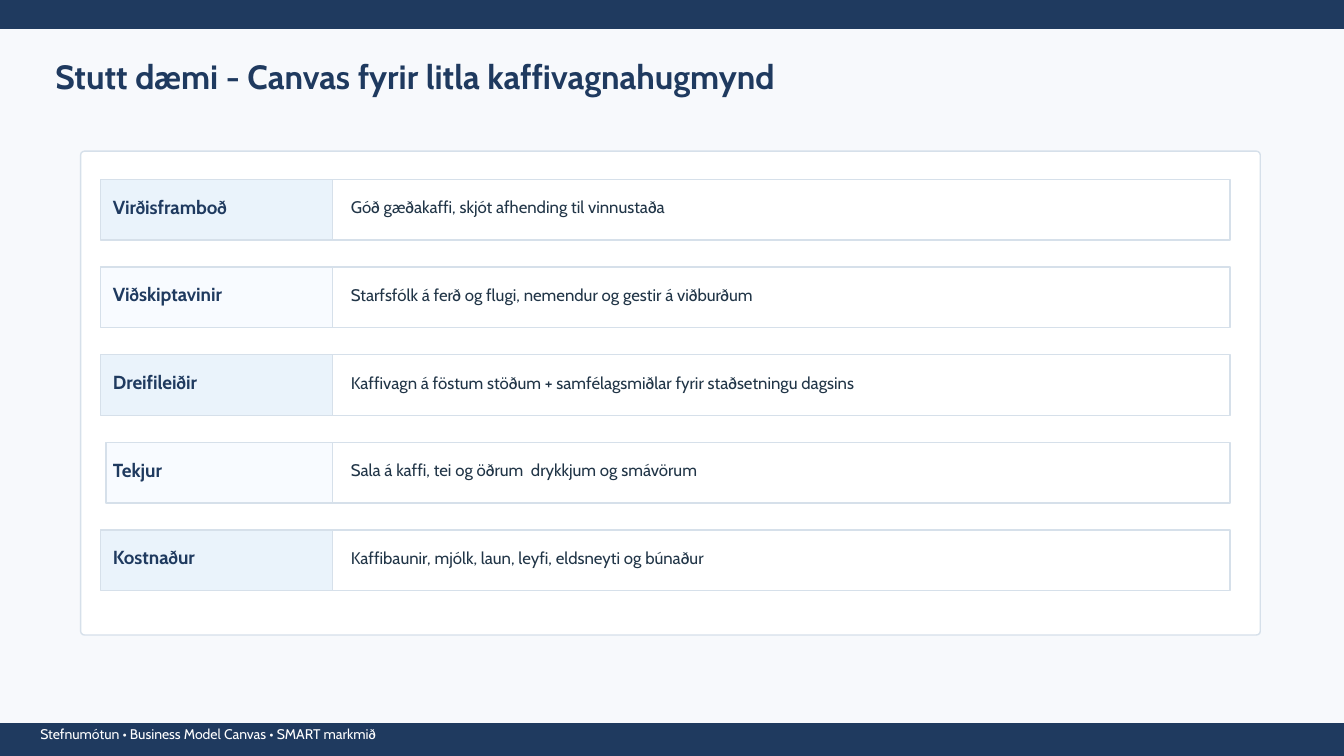
import pptx
import pptx.util
import pptx.dml.color
import pptx.enum.shapes
import pptx.enum.text

COLORS = {
    "background": "F7F9FC",
    "navy": "1F3A5F",
    "white": "FFFFFF",
    "border": "D6E0EA",
    "label_odd": "EAF3FB",
    "label_even": "F8FBFF",
    "body": "213547",
}
FONT = "Cabin"
SLIDE_WIDTH, SLIDE_HEIGHT = 13.33, 7.5
LABEL_WIDTH = 2.3
ROW_HEIGHT = 0.6
ROW_PITCH = 0.87
CANVAS_ROWS = [
    ("Virðisframboð", "Góð gæðakaffi, skjót afhending til vinnustaða", 0),
    ("Viðskiptavinir", "Starfsfólk á ferð og flugi, nemendur og gestir á viðburðum", 0),
    ("Dreifileiðir", "Kaffivagn á föstum stöðum + samfélagsmiðlar fyrir staðsetningu dagsins", 0),
    ("Tekjur", "Sala á kaffi, tei og öðrum  drykkjum og smávörum", 0.05),
    ("Kostnaður", "Kaffibaunir, mjólk, laun, leyfi, eldsneyti og búnaður", 0),
]


def rgb(color):
    return pptx.dml.color.RGBColor.from_string(COLORS[color])


def inches(box):
    return [pptx.util.Inches(length) for length in box]


def add_panel(slide, box, fill, line, corner=None):
    kinds = pptx.enum.shapes.MSO_SHAPE
    kind = kinds.RECTANGLE if corner is None else kinds.ROUNDED_RECTANGLE
    panel = slide.shapes.add_shape(kind, *inches(box))
    if corner is not None:
        panel.adjustments[0] = corner
    panel.shadow.inherit = False
    panel.fill.solid()
    panel.fill.fore_color.rgb = rgb(fill)
    panel.line.color.rgb = rgb(line)
    panel.line.width = pptx.util.Pt(1)


def add_text(slide, box, text, size, color, bold=False):
    frame = slide.shapes.add_textbox(*inches(box)).text_frame
    frame.word_wrap = True
    frame.margin_left = frame.margin_right = 0
    frame.margin_top = frame.margin_bottom = 0
    frame.vertical_anchor = pptx.enum.text.MSO_ANCHOR.MIDDLE
    run = frame.paragraphs[0].add_run()
    run.text = text
    run.font.name = FONT
    run.font.size = pptx.util.Pt(size)
    run.font.bold = bold
    run.font.color.rgb = rgb(color)


def add_header(slide, box):
    left, top, width, height = box
    add_panel(slide, (left, top, width, 0.28), "navy", "navy")
    add_text(slide, (left + 0.55, top + 0.5, 8.8, height - 0.5),
             "Stutt dæmi - Canvas fyrir litla kaffivagnahugmynd", 24, "navy", True)


def add_footer(slide, box):
    left, top, width, height = box
    add_panel(slide, box, "navy", "navy")
    add_text(slide, (left + 0.4, top + 0.02, 8.5, height / 2),
             "Stefnumótun • Business Model Canvas • SMART markmið", 10, "white")


def add_canvas_row(slide, box, label, answer, label_fill, label_shift):
    left, top, width, height = box
    answer_left = left + LABEL_WIDTH
    add_panel(slide, (left + label_shift, top, LABEL_WIDTH, height), label_fill, "border")
    add_panel(slide, (answer_left, top, width - LABEL_WIDTH, height), "white", "border")
    add_text(slide, (left + 0.12, top + 0.17, 2, 0.2), label, 13.5, "navy", True)
    add_text(slide, (answer_left + 0.18, top + 0.15, 8.5, 0.25), answer, 12, "body")


def add_canvas(slide, box):
    left, top, width, height = box
    add_panel(slide, box, "white", "border", corner=0.008)
    for index, (label, answer, label_shift) in enumerate(CANVAS_ROWS):
        row_box = (left + 0.2, top + 0.28 + index * ROW_PITCH, width - 0.5, ROW_HEIGHT)
        label_fill = "label_even" if index % 2 else "label_odd"
        add_canvas_row(slide, row_box, label, answer, label_fill, label_shift)


def main():
    presentation = pptx.Presentation()
    presentation.slide_width = pptx.util.Inches(SLIDE_WIDTH)
    presentation.slide_height = pptx.util.Inches(SLIDE_HEIGHT)
    slide = presentation.slides.add_slide(presentation.slide_layouts[6])
    slide.background.fill.solid()
    slide.background.fill.fore_color.rgb = rgb("background")
    add_header(slide, (0, 0, SLIDE_WIDTH, 1))
    add_footer(slide, (0, SLIDE_HEIGHT - 0.32, SLIDE_WIDTH, 0.32))
    add_canvas(slide, (0.8, 1.5, 11.7, 4.8))
    presentation.save("out.pptx")


if __name__ == "__main__":
    main()
